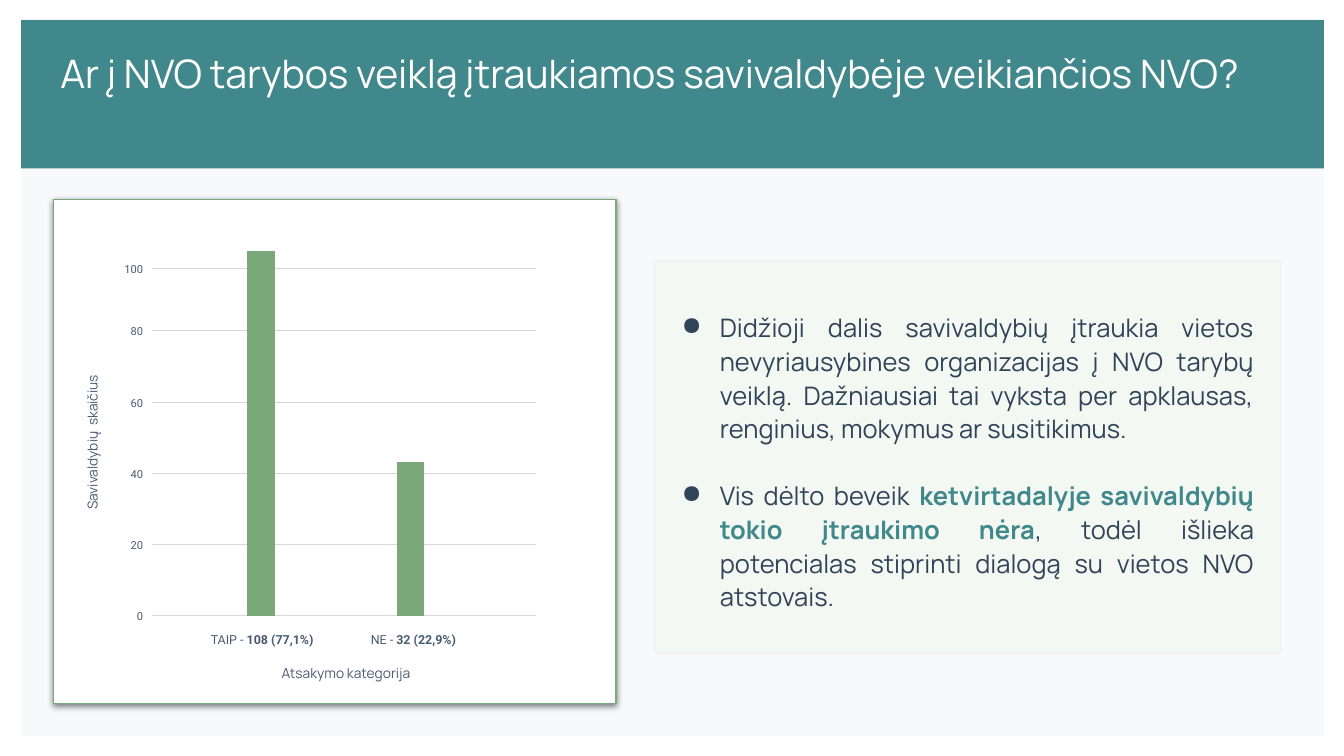
from pptx import Presentation
from pptx.dml.color import RGBColor
from pptx.enum.shapes import MSO_CONNECTOR as Connector, MSO_SHAPE as Shape
from pptx.enum.text import MSO_ANCHOR as Anchor, PP_ALIGN as Align
from pptx.oxml import parse_xml
from pptx.oxml.ns import nsdecls, qn
from pptx.util import Inches, Pt

TEAL, GREEN, GRID = "40888B", "7AA87A", "D7D7D9"
SLATE, NAVY, WHITE = "495B73", "304359", "FFFFFF"
GRID_TOPS = {0: 4.13, 20: 3.42, 40: 2.72, 60: 2.01, 80: 1.3, 100: 0.68}
# Answer, count with share, bar centre, bar top, label centre
ANSWERS = [
    ("TAIP - ", "108 (77,1%)", 2.06, 0.51, 2.07),
    ("NE - ", "32 (22,9%)", 3.54, 2.6, 3.57),
]
FINDINGS = [
    [("Didžioji dalis savivaldybių įtraukia vietos nevyriausybines organizacijas "
      "į NVO tarybų veiklą. Dažniausiai tai vyksta per apklausas, renginius, "
      "mokymus ar susitikimus.", False)],
    [("Vis dėlto beveik ", False),
     ("ketvirtadalyje savivaldybių tokio įtraukimo nėra", True),
     (", todėl išlieka potencialas stiprinti dialogą su vietos NVO atstovais.", False)],
]


def color(value):
    return RGBColor.from_string(value)


def add_panel(page, left, top, width, height, fill, outline=None):
    panel = page.shapes.add_shape(
        Shape.RECTANGLE, Inches(left), Inches(top), Inches(width), Inches(height))
    panel.shadow.inherit = False
    panel.fill.solid()
    panel.fill.fore_color.rgb = color(fill)
    if outline:
        panel.line.color.rgb = color(outline)
        panel.line.width = Pt(0.75)
    else:
        panel.line.fill.background()
    return panel


def drop_shadow(panel):
    effects = panel._element.spPr.find(qn("a:effectLst"))
    effects.append(parse_xml(
        f'<a:outerShdw {nsdecls("a")} blurRad="{Pt(4.5)}" dist="{Pt(1.5)}" '
        'dir="5400000" algn="t" rotWithShape="0"><a:srgbClr val="000000">'
        '<a:alpha val="50000"/></a:srgbClr></a:outerShdw>'))


def add_line(page, x1, y1, x2, y2, stroke, width):
    line = page.shapes.add_connector(
        Connector.STRAIGHT, Inches(x1), Inches(y1), Inches(x2), Inches(y2))
    line.line.color.rgb = color(stroke)
    line.line.width = Pt(width)
    line._element.spPr.append(parse_xml(f'<a:effectLst {nsdecls("a")}/>'))


def add_frame(page, left, top, width, height):
    """Add a wrapping, vertically centred text box without margins."""
    box = page.shapes.add_textbox(
        Inches(left), Inches(top), Inches(width), Inches(height))
    frame = box.text_frame
    frame.word_wrap = True
    frame.vertical_anchor = Anchor.MIDDLE
    frame.margin_left = frame.margin_right = 0
    frame.margin_top = frame.margin_bottom = 0
    return box


def style(font, name, size, fill, bold=False):
    font.name = name
    font.size = Pt(size)
    font.color.rgb = color(fill)
    font.bold = bold


def add_spans(para, spans, name, size, fill, strong):
    """Add (text, bold) spans, colouring the bold ones with strong."""
    for text, bold in spans:
        span = para.add_run()
        span.text = text
        style(span.font, name, size, strong if bold else fill, bold)


def add_label(page, left, top, width, height, spans, name, size, align):
    box = add_frame(page, left, top, width, height)
    para = box.text_frame.paragraphs[0]
    para.alignment = align
    add_spans(para, spans, name, size, SLATE, SLATE)
    return box


def add_axis_title(page, left, top, text):
    title = add_label(page, left, top, 1.55, 0.19, [(text, False)],
                      "Manrope", 9.8, Align.RIGHT)
    title.text_frame.paragraphs[0].line_spacing = 0.9
    return title


def add_header(page, left, top, width, height):
    add_panel(page, left, top, width, height, TEAL)
    box = page.shapes.add_textbox(
        Inches(left + 0.29), Inches(top + 0.24), Inches(12.08), Inches(1.04))
    frame = box.text_frame
    frame.word_wrap = True
    frame.text = "Ar į NVO tarybos veiklą įtraukiamos savivaldybėje veikiančios NVO?"
    style(frame.paragraphs[0].runs[0].font, "Manrope", 28, WHITE)


def add_answer_graph(page, left, top, width, height):
    """Draw the bars as strokes: their heights are not to scale with the labels."""
    drop_shadow(add_panel(page, left, top, width, height, WHITE, GREEN))
    for value, offset in GRID_TOPS.items():
        y = top + offset
        add_line(page, left + 0.98, y, left + 4.79, y, GRID, 0.79)
        add_label(page, left + 0.26, y - 0.12, 0.63, 0.25, [(str(value), False)],
                  "Roboto", 7.9, Align.RIGHT)
    base = top + GRID_TOPS[0]
    for answer, count, bar, bar_top, middle in ANSWERS:
        add_line(page, left + bar, top + bar_top, left + bar, base, GREEN, 19.73)
        add_label(page, left + middle - 0.61, base + 0.11, 1.22, 0.25,
                  [(answer, False), (count, True)], "Roboto", 8.9, Align.CENTER)
    add_axis_title(page, left - 0.38, top + 2.42, "Savivaldybių  skaičius").rotation = 270
    add_axis_title(page, left + 1.99, top + 4.61, "Atsakymo kategorija")


def add_bullet(para):
    props = para._p.get_or_add_pPr()
    props.set("marL", str(Inches(0.5)))
    props.set("indent", str(Inches(-0.38)))
    props.append(parse_xml(
        f'<a:buClr {nsdecls("a")}><a:srgbClr val="{NAVY}"/></a:buClr>'))
    props.append(parse_xml(f'<a:buChar {nsdecls("a")} char="●"/>'))


def add_findings(page, left, top, width, height):
    add_panel(page, left, top, width, height, "F4F8F2", "F0F0F1")
    frame = add_frame(page, left + 0.15, top + 0.05, 5.8, 3.88).text_frame
    for index, spans in enumerate(FINDINGS):
        para = frame.add_paragraph() if index else frame.paragraphs[0]
        add_bullet(para)
        para.alignment = Align.JUSTIFY
        para.line_spacing = 1.1
        if index:
            para.space_before = Pt(24)
        add_spans(para, spans, "Manrope", 18.2, NAVY, TEAL)


def main():
    deck = Presentation()
    deck.slide_width, deck.slide_height = Inches(13.33), Inches(7.5)
    page = deck.slides.add_slide(deck.slide_layouts[6])
    add_panel(page, 0.21, 0.19, 12.92, 7.11, "F8F9FA")
    add_answer_graph(page, 0.53, 1.98, 5.58, 5)
    add_findings(page, 6.49, 2.58, 6.21, 3.9)
    add_header(page, 0.21, 0.2, 12.92, 1.47)
    deck.save("out.pptx")


if __name__ == "__main__":
    main()
